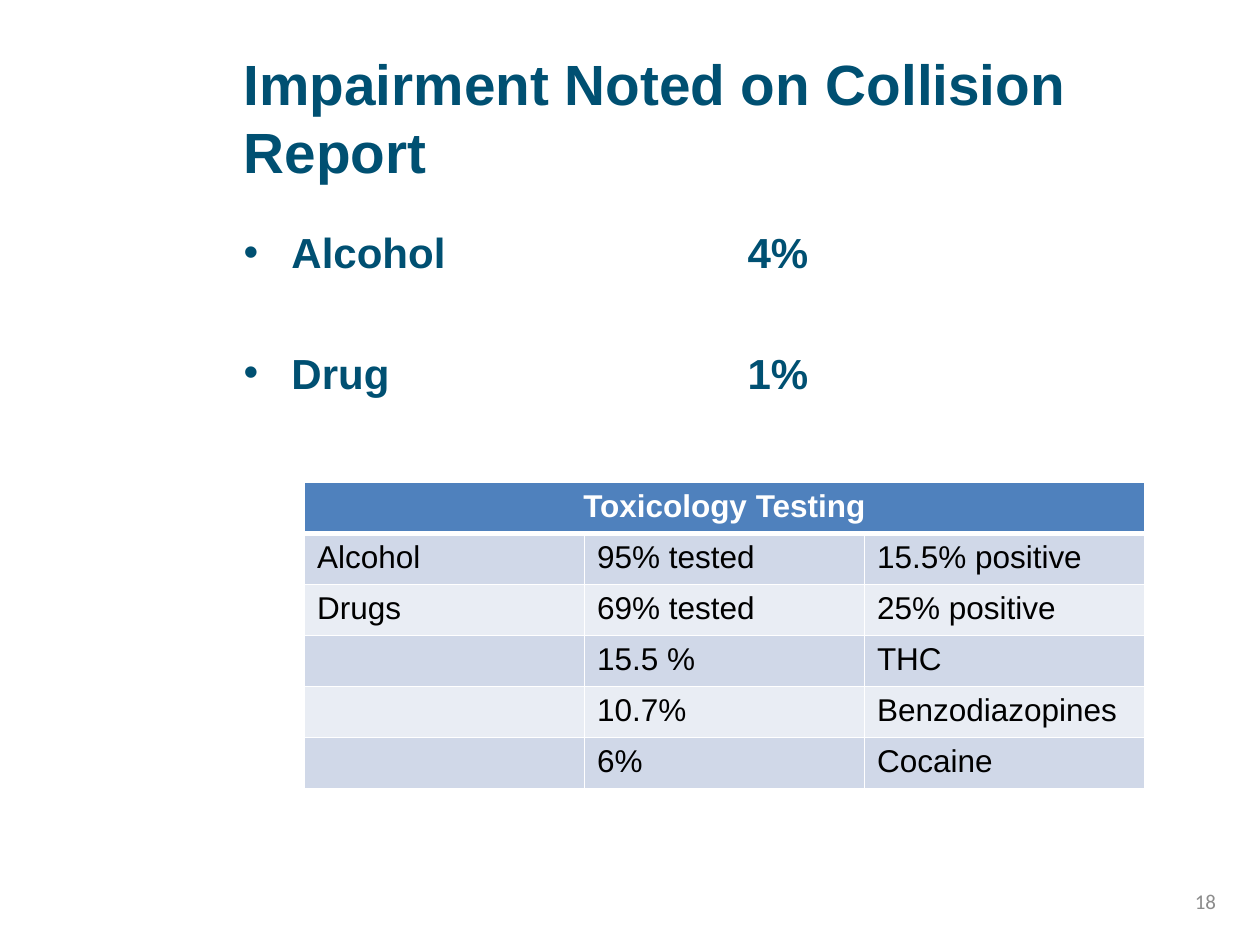
import pptx
import pptx.util
import pptx.dml.color
import pptx.enum.text
from lxml import etree

Pt = pptx.util.Pt
Inches = pptx.util.Inches
Align = pptx.enum.text.PP_ALIGN
Anchor = pptx.enum.text.MSO_ANCHOR
NS = "http://schemas.openxmlformats.org/drawingml/2006/main"

HUES = {"teal": "005072", "grey": "8C8C8C", "white": "FFFFFF", "black": "000000",
        "head": "4F81BD", "dark": "D0D8E8", "light": "E9EDF4"}
RATES = [("Alcohol", "4%"), ("Drug", "1%")]
TESTS = [
    ("Toxicology Testing", "", ""),
    ("Alcohol", "95% tested", "15.5% positive"),
    ("Drugs", "69% tested", "25% positive"),
    ("", "15.5 %", "THC"),
    ("", "10.7%", "Benzodiazopines"),
    ("", "6%", "Cocaine"),
]


def color(name):
    return pptx.dml.color.RGBColor.from_string(HUES[name])


def add(node, tag, **attrs):
    return etree.SubElement(node, f"{{{NS}}}{tag}", attrs)


class Deck:
    """Style and current slide, on a grid of 120 columns by 150 rows."""

    def __init__(self):
        self.prs = pptx.Presentation()
        self.prs.slide_width, self.prs.slide_height = Inches(10), Inches(7.5)
        self.col = self.prs.slide_width / 120
        self.row = self.prs.slide_height / 150
        self.slide = self.prs.slides.add_slide(self.prs.slide_layouts[1])

    def area(self, x, y, w, h):
        return (round(x * self.col), round(y * self.row),
                round(w * self.col), round(h * self.row))

    def place(self, shape, *box):
        shape.left, shape.top, shape.width, shape.height = self.area(*box)
        shape.text_frame.word_wrap = True
        shape.text_frame.auto_size = pptx.enum.text.MSO_AUTO_SIZE.NONE

    def style(self, para, size, hue, bold=False, align=Align.LEFT, face="Arial"):
        para.alignment = align
        for run in para.runs:
            font = run.font
            font.name, font.size, font.bold = face, Pt(size), bold
            font.color.rgb = color(hue)

    def title(self, text, *box):
        shape = self.slide.shapes.title
        self.place(shape, *box)
        frame = shape.text_frame
        frame.text = text
        frame.vertical_anchor = Anchor.MIDDLE
        self.style(frame.paragraphs[0], 32.4, "teal", True)

    def rates(self, items, *box):
        """List with the values lined up at a tab stop."""
        shape = self.slide.placeholders[1]
        self.place(shape, *box)
        frame = shape.text_frame
        frame.text = "\n".join("\t".join(item) for item in items)
        for i, para in enumerate(frame.paragraphs):
            para.space_before = Pt(40 if i else 0)
            props = para._p.get_or_add_pPr()
            props.set("marL", str(Inches(0.38)))
            props.set("indent", str(-Inches(0.38)))
            add(props, "buFont", typeface="Arial")
            add(props, "buChar", char="•")
            add(add(props, "tabLst"), "tab", pos=str(Inches(4)), algn="l")
            self.style(para, 24, "teal", True)

    def number(self, text, *box):
        shape = self.slide.shapes.add_textbox(*self.area(*box))
        frame = shape.text_frame
        frame.word_wrap = True
        frame.vertical_anchor = Anchor.MIDDLE
        frame.text = text
        self.style(frame.paragraphs[0], 12, "grey", align=Align.RIGHT, face="Calibri")

    def edges(self, cell, head):
        """White cell borders, heavier below the header and above the first row."""
        props = cell._tc.get_or_add_tcPr()
        for side in ("lnL", "lnR", "lnT", "lnB"):
            thick = 3 if head and side == "lnB" else 1
            line = add(props, side, w=str(Pt(thick)))
            add(add(line, "solidFill"), "srgbClr", val=HUES["white"])

    def table(self, rows, *box):
        grid = self.slide.shapes.add_table(len(rows), len(rows[0]), *self.area(*box)).table
        for r, row in enumerate(rows):
            head = r == 0
            fill = "head" if head else "dark" if r % 2 else "light"
            for c, text in enumerate(row):
                cell = grid.cell(r, c)
                self.edges(cell, head)
                cell.fill.solid()
                cell.fill.fore_color.rgb = color(fill)
                cell.text_frame.text = text
                self.style(cell.text_frame.paragraphs[0], 18,
                           "white" if head else "black", head,
                           Align.CENTER if head else Align.LEFT)
        grid.cell(0, 0).merge(grid.cell(0, len(rows[0]) - 1))


def main():
    deck = Deck()
    deck.title("Impairment Noted on Collision Report", 22, 6, 95, 25)
    deck.rates(RATES, 22, 35, 95, 99)
    deck.number("18", 103, 139, 14, 8)
    deck.table(TESTS, 29, 76.6, 80, 48.6)
    deck.prs.save("out.pptx")


if __name__ == "__main__":
    main()
